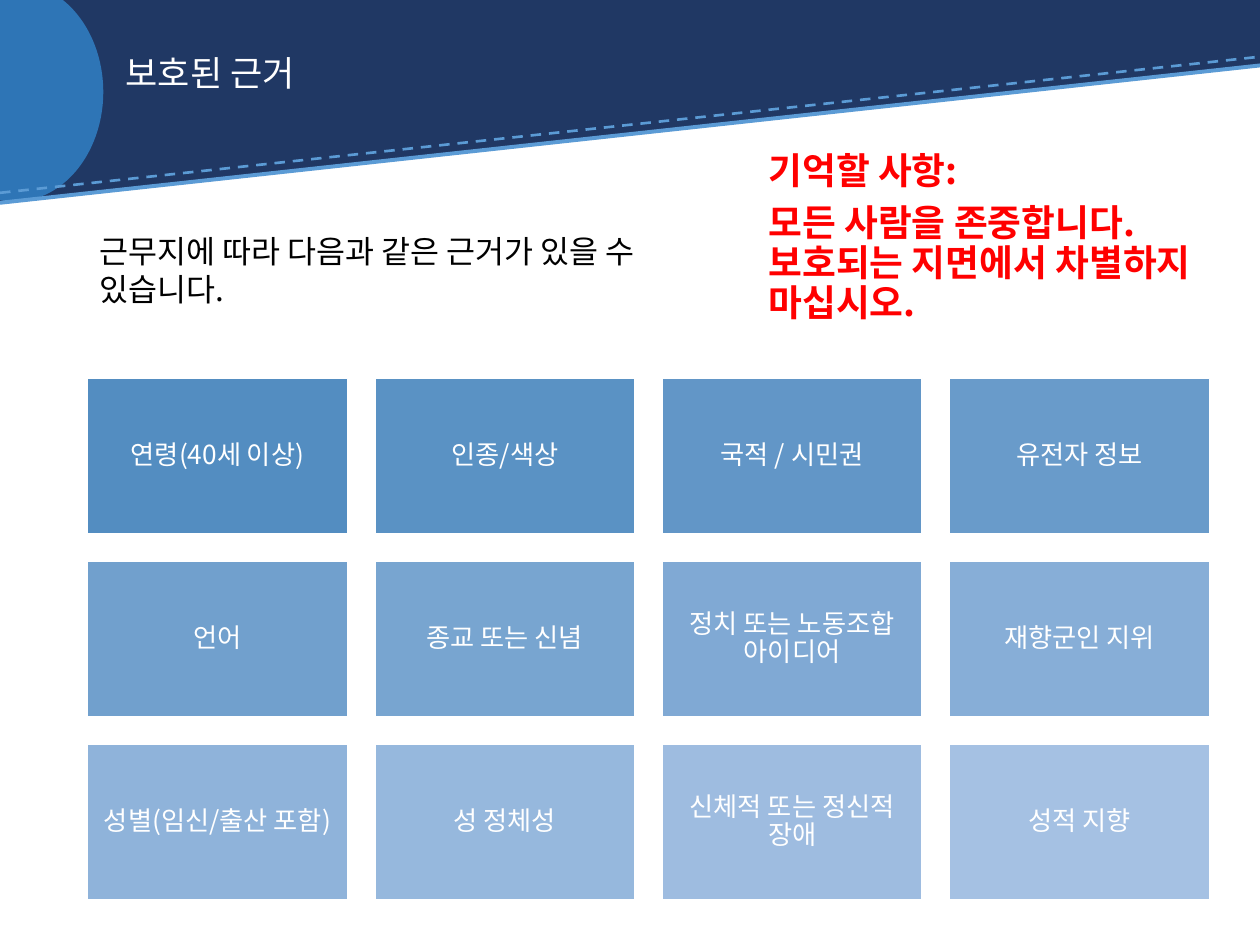
from lxml import etree
from pptx import Presentation
from pptx.dml.color import RGBColor
from pptx.enum.dml import MSO_LINE
from pptx.enum.shapes import MSO_CONNECTOR, MSO_SHAPE
from pptx.enum.text import MSO_ANCHOR, PP_ALIGN
from pptx.oxml.ns import qn
from pptx.util import Pt

FONT = "Noto Sans CJK KR"
NAVY = RGBColor(0x20, 0x38, 0x64)
BLUE = RGBColor(0x2E, 0x75, 0xB6)
SKY = RGBColor(0x5B, 0x9B, 0xD5)
RED = RGBColor(0xFF, 0x00, 0x00)
BLACK = RGBColor(0x00, 0x00, 0x00)
WHITE = RGBColor(0xFF, 0xFF, 0xFF)
TILE_FIRST = RGBColor(0x53, 0x8D, 0xC1)
TILE_LAST = RGBColor(0xA5, 0xC1, 0xE3)

# Content
TITLE = "보호된 근거"
INTRO = "근무지에 따라 다음과 같은 근거가 있을 수 있습니다."
REMINDER = ["기억할 사항:", "모든 사람을 존중합니다. 보호되는 지면에서 차별하지 마십시오."]
GROUNDS = [
    "연령(40세 이상)", "인종/색상", "국적 / 시민권", "유전자 정보",
    "언어", "종교 또는 신념", "정치 또는 노동조합 아이디어", "재향군인 지위",
    "성별(임신/출산 포함)", "성 정체성", "신체적 또는 정신적 장애", "성적 지향",
]

# Layout in points
BANDS = [
    (MSO_SHAPE.RECTANGLE, (0, 0, 720, 37.4), NAVY),
    (MSO_SHAPE.RIGHT_TRIANGLE, (0, 36.7, 720, 78.5), NAVY),
    (MSO_SHAPE.OVAL, (-42.5, -10.1, 101.5, 125.3), BLUE),
]
RULES = [(110.2, 32.4, 1.5, MSO_LINE.DASH), (115.9, 37.4, 2.25, None)]
COLUMNS = 4
GRID_LEFT, GRID_TOP = 50, 216.3
TILE_W, TILE_H, GAP = 148.6, 88.9, 15.6

prs = Presentation()
prs.slide_width, prs.slide_height = Pt(720), Pt(540)
s = prs.slides.add_slide(prs.slide_layouts[6])


def add_filled(kind, box, color):
    sp = s.shapes.add_shape(kind, *map(Pt, box))
    sp.shadow.inherit = False
    sp.fill.solid()
    sp.fill.fore_color.rgb = color
    sp.line.fill.background()
    return sp


def write(sp, lines, size, color, bold=False, spacing=0.9, before=0, align=PP_ALIGN.LEFT):
    tf = sp.text_frame
    tf.word_wrap = True
    tf.text = "\n".join(lines)
    for i, p in enumerate(tf.paragraphs):
        p.alignment = align
        p.line_spacing = spacing
        if i:
            p.space_before = Pt(before)
        for r in p.runs:
            r.font.size = Pt(size)
            r.font.bold = bold
            r.font.name = FONT
            r.font.color.rgb = color
            # Hangul uses the East Asian typeface
            ea = etree.SubElement(r.font._element, qn("a:ea"))
            ea.set("typeface", FONT)
    return tf


def add_text(box, *args, **style):
    return write(s.shapes.add_textbox(*map(Pt, box)), *args, **style)


# Slanted header
for kind, box, color in BANDS:
    sp = add_filled(kind, box, color)
    if kind == MSO_SHAPE.RIGHT_TRIANGLE:
        sp.element.spPr.xfrm.set("flipV", "1")

for y_left, y_right, width, dash in RULES:
    rule = s.shapes.add_connector(
        MSO_CONNECTOR.STRAIGHT, Pt(0), Pt(y_left), Pt(720), Pt(y_right))
    rule.line.color.rgb = SKY
    rule.line.width = Pt(width)
    if dash:
        rule.line.dash_style = dash
    etree.SubElement(rule.element.spPr, qn("a:effectLst"))

# Title, reminder and introduction
title = add_text((64.8, 14.4, 581, 57.6), [TITLE], 20, WHITE)
title.vertical_anchor = MSO_ANCHOR.MIDDLE
add_text((432, 83.5, 272.2, 122.4), REMINDER, 21, RED, bold=True, before=7.5)
add_text((49.7, 128.9, 331.9, 28.8), [INTRO], 18, BLACK, spacing=1)

# Grid of grounds, shading from dark to light
for i, ground in enumerate(GROUNDS):
    row, col = divmod(i, COLUMNS)
    t = i / (len(GROUNDS) - 1)
    shade = RGBColor(*(round(a + (b - a) * t) for a, b in zip(TILE_FIRST, TILE_LAST)))
    box = (GRID_LEFT + col * (TILE_W + GAP), GRID_TOP + row * (TILE_H + GAP), TILE_W, TILE_H)
    tile = add_filled(MSO_SHAPE.RECTANGLE, box, shade)
    tile.line.color.rgb = WHITE
    tile.line.width = Pt(1)
    tf = write(tile, [ground], 15, WHITE, align=PP_ALIGN.CENTER)
    tf.vertical_anchor = MSO_ANCHOR.MIDDLE
    tf.margin_left = tf.margin_right = tf.margin_top = tf.margin_bottom = Pt(4.5)

prs.save("out.pptx")
